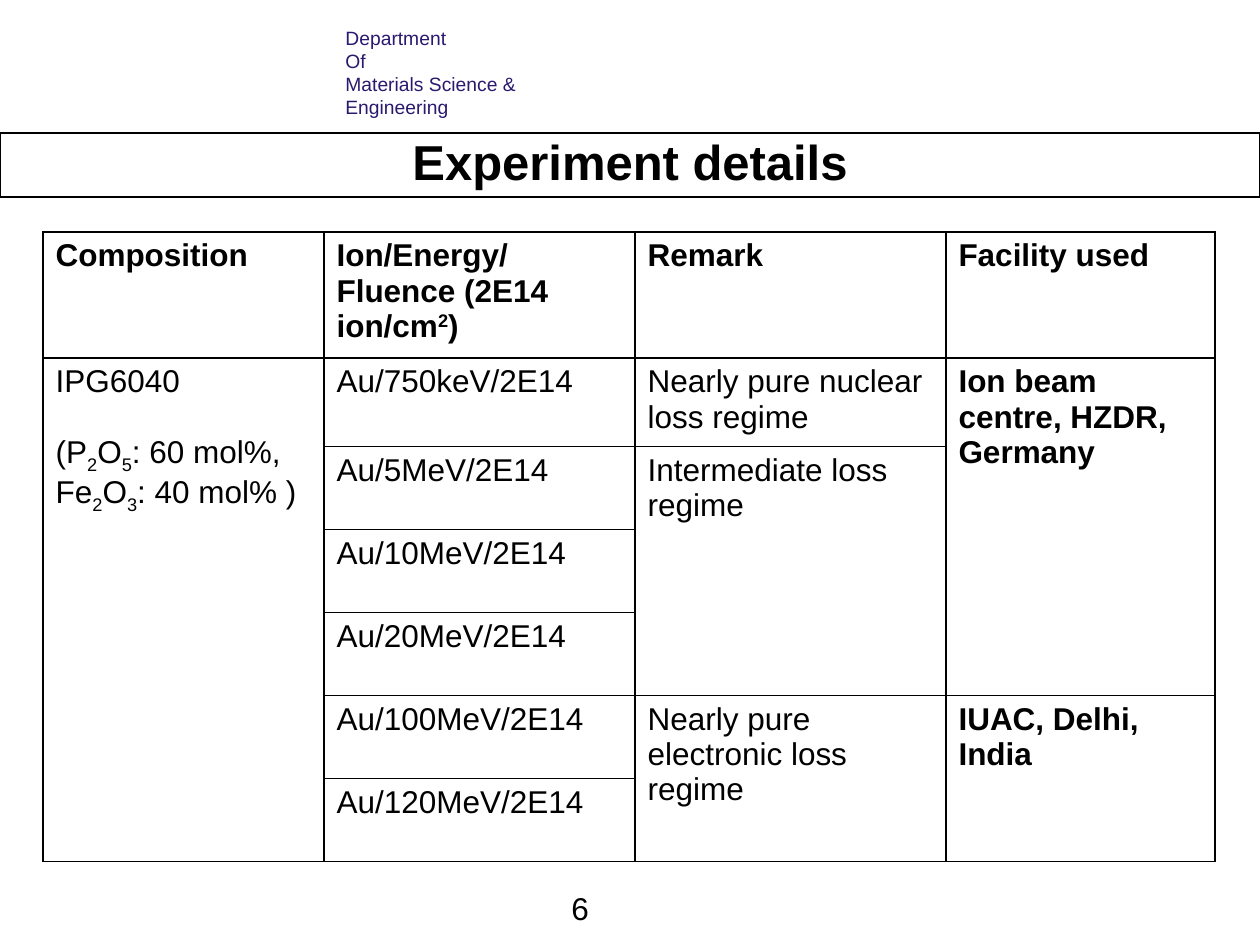
"""Build the experiment details slide with its merged table of ion runs."""
from lxml import etree
from pptx import Presentation
from pptx.dml.color import RGBColor
from pptx.enum.text import MSO_ANCHOR, PP_ALIGN
from pptx.oxml.ns import qn
from pptx.util import Emu, Pt

CENTER = PP_ALIGN.CENTER
BOTTOM = MSO_ANCHOR.BOTTOM
SCALE = 914400 / 126
BLACK = "000000"
NAVY = "2A196F"


def px(n):
    return Emu(round(n * SCALE))


def add_run(para, text, size=18, color=BLACK, bold=False, base=0):
    run = para.add_run()
    run.text = text
    font = run.font
    font.name, font.size, font.bold = "Arial", Pt(size), bold
    font.color.rgb = RGBColor.from_string(color)
    if base:
        font._element.set("baseline", str(base * 1000))


prs = Presentation()
prs.slide_width, prs.slide_height = px(1260), px(945)
slide = prs.slides.add_slide(prs.slide_layouts[5])

dept = slide.shapes.add_textbox(px(333), px(20), px(873), px(106)).text_frame
dept.word_wrap = True
lines = ["Department", "Of", "Materials Science &", "Engineering"]
for i, line in enumerate(lines):
    para = dept.add_paragraph() if i else dept.paragraphs[0]
    add_run(para, line, 11, NAVY)

title = slide.shapes.title
title.left, title.top, title.width, title.height = px(0), px(133), px(1260), px(64)
title.line.color.rgb = RGBColor.from_string(BLACK)
title.line.width = Pt(1)
title.text_frame.vertical_anchor = BOTTOM
para = title.text_frame.paragraphs[0]
para.alignment = CENTER
para.line_spacing = 0.83
add_run(para, "Experiment details", 28, bold=True)

widths = [281, 311, 311, 269]
heights = [118] + [83] * 6
table = slide.shapes.add_table(
    len(heights), len(widths), px(43), px(232), px(sum(widths)), px(sum(heights))
).table
table.first_row = table.horz_banding = False
for col, width in zip(table.columns, widths):
    col.width = px(width)
for row, height in zip(table.rows, heights):
    row.height = px(height)

for cell in table.iter_cells():
    props = cell._tc.get_or_add_tcPr()
    for side in ("a:lnL", "a:lnR", "a:lnT", "a:lnB"):
        edge = etree.SubElement(props, qn(side), w=str(Pt(1)))
        fill = etree.SubElement(edge, qn("a:solidFill"))
        etree.SubElement(fill, qn("a:srgbClr"), val=BLACK)
    cell.fill.background()

spans = [(1, 0, 6), (1, 3, 4), (2, 2, 3), (5, 2, 2), (5, 3, 2)]
for row, col, count in spans:
    table.cell(row, col).merge(table.cell(row + count - 1, col))

texts = {
    (0, 0): "Composition",
    (0, 2): "Remark",
    (0, 3): "Facility used",
    (1, 2): "Nearly pure nuclear loss regime",
    (2, 2): "Intermediate loss regime",
    (5, 2): "Nearly pure electronic loss regime",
    (1, 3): "Ion beam centre, HZDR, Germany",
    (5, 3): "IUAC, Delhi, India",
}
powers = ["750keV", "5MeV", "10MeV", "20MeV", "100MeV", "120MeV"]
for row, power in enumerate(powers, 1):
    texts[row, 1] = f"Au/{power}/2E14"
for (row, col), text in texts.items():
    para = table.cell(row, col).text_frame.paragraphs[0]
    add_run(para, text, bold=row == 0 or col == 3)

para = table.cell(0, 1).text_frame.paragraphs[0]
for text, base in [("Ion/Energy/Fluence (2E14 ion/cm", 0), ("2", 30), (")", 0)]:
    add_run(para, text, bold=True, base=base)

glass = table.cell(1, 0).text_frame
add_run(glass.paragraphs[0], "IPG6040")
oxides = [("(P", "2", "O", "5", ": 60 mol%,"), ("Fe", "2", "O", "3", ": 40 mol% )")]
for i, parts in enumerate(oxides):
    para = glass.add_paragraph()
    para.space_before = Pt(0 if i else 20)
    for j, part in enumerate(parts):
        add_run(para, part, base=-25 if j % 2 else 0)

page = slide.shapes.add_textbox(px(559), px(883), px(35), px(50)).text_frame
add_run(page.paragraphs[0], "6")

prs.save("out.pptx")
